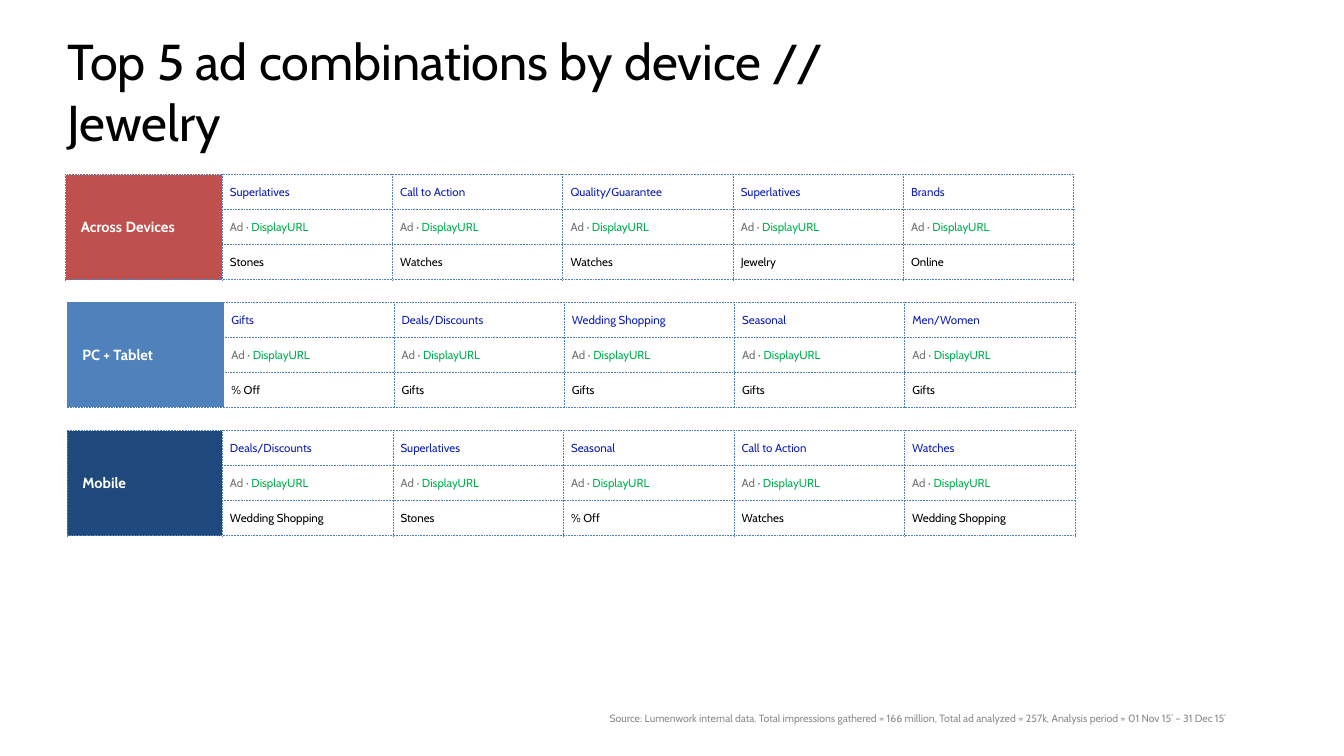
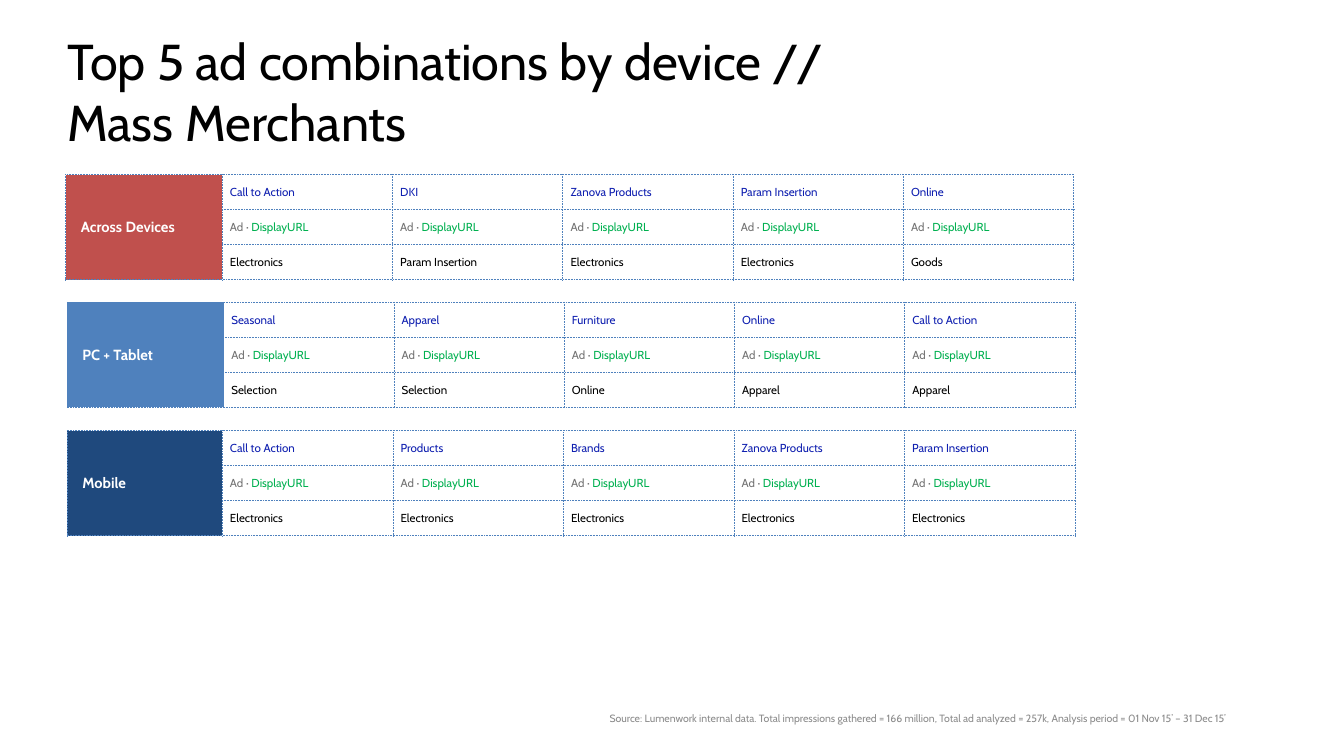
from lxml.etree import SubElement
from pptx import Presentation
from pptx.dml.color import RGBColor
from pptx.enum.text import MSO_ANCHOR, MSO_AUTO_SIZE, PP_ALIGN
from pptx.oxml.ns import qn
from pptx.util import Inches, Pt

# Shared colours
WHITE = RGBColor(0xFF, 0xFF, 0xFF)
BLACK = RGBColor(0x00, 0x00, 0x00)
RED = RGBColor(0xC0, 0x50, 0x4D)
BLUE = RGBColor(0x4F, 0x81, 0xBD)
NAVY = RGBColor(0x1F, 0x49, 0x7D)
LINK_BLUE = RGBColor(0x10, 0x20, 0xB0)
URL_GREEN = RGBColor(0x00, 0xB0, 0x50)
AD_GREY = RGBColor(0x73, 0x73, 0x73)
SOURCE_GREY = RGBColor(0x8C, 0x8C, 0x8C)

# Grid: 20 columns by 100 rows
FONT = "Cabin"
COLUMNS, ROWS = 20, 100
AD_COUNT = 5
AD_ROW_HEIGHT = 4.63

TITLE = "Top 5 ad combinations by device //"
SOURCE = ("Source: Lumenwork internal data. Total impressions gathered = 166 million, "
          "Total ad analyzed = 257k, Analysis period = 01 Nov 15’ – 31 Dec 15’")

# Device: colour, left column, top row, label width in columns
DEVICES = {
    "Mobile": (NAVY, 1, 57, 2.31),
    "PC + Tablet": (BLUE, 1, 40, 2.33),
    "Across Devices": (RED, 0.98, 23.1, 2.33),
}

# Category: device: (headlines, descriptions)
CATEGORIES = {
    "Jewelry": {
        "Mobile": (
            ["Deals/Discounts", "Superlatives", "Seasonal", "Call to Action", "Watches"],
            ["Wedding Shopping", "Stones", "% Off", "Watches", "Wedding Shopping"]),
        "PC + Tablet": (
            ["Gifts", "Deals/Discounts", "Wedding Shopping", "Seasonal", "Men/Women"],
            ["% Off"] + ["Gifts"] * 4),
        "Across Devices": (
            ["Superlatives", "Call to Action", "Quality/Guarantee", "Superlatives", "Brands"],
            ["Stones", "Watches", "Watches", "Jewelry", "Online"]),
    },
    "Mass Merchants": {
        "Mobile": (
            ["Call to Action", "Products", "Brands", "Zanova Products", "Param Insertion"],
            ["Electronics"] * AD_COUNT),
        "PC + Tablet": (
            ["Seasonal", "Apparel", "Furniture", "Online", "Call to Action"],
            ["Selection", "Selection", "Online", "Apparel", "Apparel"]),
        "Across Devices": (
            ["Call to Action", "DKI", "Zanova Products", "Param Insertion", "Online"],
            ["Electronics", "Param Insertion", "Electronics", "Electronics", "Goods"]),
    },
}


class Deck:
    """Holds the style and the current slide."""

    def __init__(self):
        self.presentation = Presentation()
        self.presentation.slide_width = Inches(17.78)
        self.presentation.slide_height = Inches(10)
        self.slide = None

    def across(self, columns):
        return round(self.presentation.slide_width * columns / COLUMNS)

    def down(self, rows):
        return round(self.presentation.slide_height * rows / ROWS)

    def box(self, left, top, width, height):
        return self.across(left), self.down(top), self.across(width), self.down(height)

    def add_run(self, paragraph, text, size, color, bold=False):
        run = paragraph.add_run()
        run.text = text
        run.font.name = FONT
        run.font.size = Pt(size)
        run.font.bold = bold
        run.font.color.rgb = color

    def plain_frame(self, shape):
        frame = shape.text_frame
        frame.word_wrap = True
        frame.auto_size = MSO_AUTO_SIZE.SHAPE_TO_FIT_TEXT
        frame.vertical_anchor = MSO_ANCHOR.TOP
        frame.margin_left = frame.margin_right = 0
        frame.margin_top = frame.margin_bottom = 0
        paragraph = frame.paragraphs[0]
        paragraph.alignment = PP_ALIGN.LEFT
        return paragraph

    def add_slide(self, category):
        layout = self.presentation.slide_layouts.get_by_name("Title Only")
        self.slide = self.presentation.slides.add_slide(layout)
        title = self.slide.shapes.title
        title.left, title.top, title.width, title.height = self.box(1, 4, 18, 16.2)
        paragraph = self.plain_frame(title)
        self.add_run(paragraph, TITLE, 48, BLACK)
        paragraph.add_line_break()
        self.add_run(paragraph, category, 48, BLACK)

    def add_source(self):
        shape = self.slide.shapes.add_textbox(*self.box(9.07, 94.2, 9.93, 2.5))
        self.add_run(self.plain_frame(shape), SOURCE, 10, SOURCE_GREY)

    def style_cell(self, cell, fill, side_margin=0.1, end_margin=0.05):
        cell.fill.solid()
        cell.fill.fore_color.rgb = fill
        cell.vertical_anchor = MSO_ANCHOR.MIDDLE
        cell.margin_left = cell.margin_right = Inches(side_margin)
        cell.margin_top = cell.margin_bottom = Inches(end_margin)
        # Dotted borders go ahead of the fill
        properties = cell._tc.get_or_add_tcPr()
        for position, edge in enumerate(("a:lnL", "a:lnR", "a:lnT", "a:lnB")):
            line = SubElement(properties, qn(edge), w=str(Pt(1)))
            SubElement(SubElement(line, qn("a:solidFill")), qn("a:srgbClr"), val=str(BLUE))
            SubElement(line, qn("a:prstDash"), val="dot")
            properties.insert(position, line)

    def add_device_table(self, device, headlines, descriptions):
        color, left, top, label_width = DEVICES[device]
        total_width = 15
        table = self.slide.shapes.add_table(
            3, AD_COUNT + 1, *self.box(left, top, total_width, 3 * AD_ROW_HEIGHT)).table
        table.first_row = table.horz_banding = False
        table.columns[0].width = self.across(label_width)
        for index in range(1, AD_COUNT + 1):
            table.columns[index].width = self.across((total_width - label_width) / AD_COUNT)
        for row in table.rows:
            row.height = self.down(AD_ROW_HEIGHT)

        # Device label, spanning all rows
        for index in range(3):
            self.style_cell(table.cell(index, 0), color, 0.2, 0)
        label = table.cell(0, 0)
        label.merge(table.cell(2, 0))
        self.add_run(label.text_frame.paragraphs[0], device, 14, WHITE, True)

        # One ad per column: headline, address, description
        for column, (headline, description) in enumerate(zip(headlines, descriptions), 1):
            ad_lines = ([(headline, LINK_BLUE)],
                        [("Ad · ", AD_GREY), ("DisplayURL", URL_GREEN)],
                        [(description, BLACK)])
            for row, runs in enumerate(ad_lines):
                cell = table.cell(row, column)
                self.style_cell(cell, WHITE)
                for text, text_color in runs:
                    self.add_run(cell.text_frame.paragraphs[0], text, 11, text_color)


def main():
    deck = Deck()
    for category, devices in CATEGORIES.items():
        deck.add_slide(category)
        deck.add_source()
        for device, (headlines, descriptions) in devices.items():
            deck.add_device_table(device, headlines, descriptions)
    deck.presentation.save("out.pptx")


if __name__ == "__main__":
    main()
